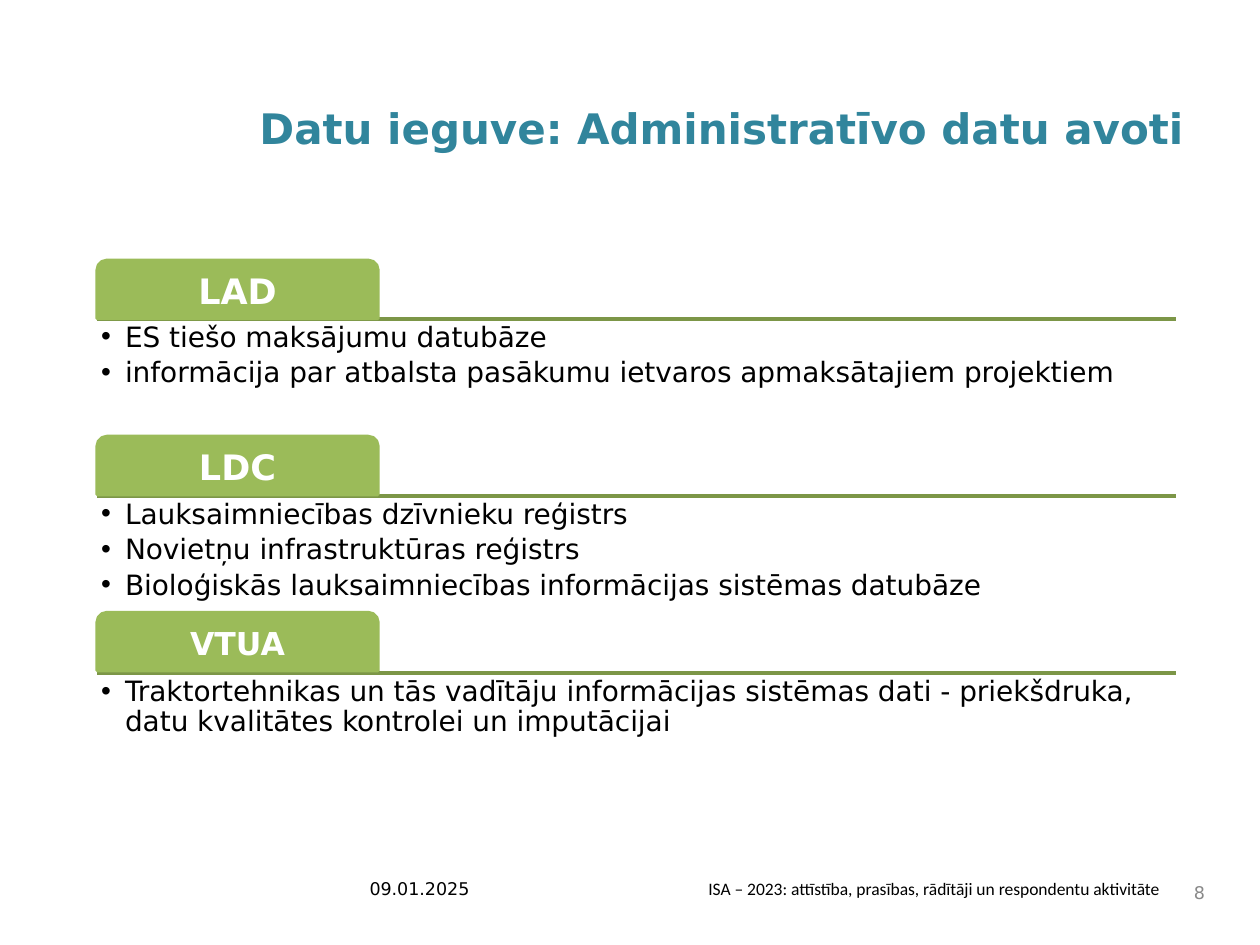
from lxml.etree import SubElement
from pptx import Presentation
from pptx.dml.color import RGBColor
from pptx.enum.shapes import MSO_CONNECTOR, MSO_SHAPE
from pptx.enum.text import MSO_ANCHOR, MSO_AUTO_SIZE, PP_ALIGN
from pptx.oxml.ns import qn
from pptx.util import Cm, Pt

# Content
TITLE = "Datu ieguve: Administratīvo datu avoti"
GROUPS = [
    ("LAD", 20, [
        "ES tiešo maksājumu datubāze",
        "informācija par atbalsta pasākumu ietvaros apmaksātajiem projektiem",
    ]),
    ("LDC", 20, [
        "Lauksaimniecības dzīvnieku reģistrs",
        "Novietņu infrastruktūras reģistrs",
        "Bioloģiskās lauksaimniecības informācijas sistēmas datubāze",
    ]),
    ("VTUA", 18, [
        "Traktortehnikas un tās vadītāju informācijas sistēmas dati - "
        "priekšdruka, datu kvalitātes kontrolei un imputācijai",
    ]),
]

# Colours and fonts
TEAL = RGBColor(0x31, 0x85, 0x9C)
GREEN = RGBColor(0x9B, 0xBB, 0x59)
OLIVE = RGBColor(0x7C, 0x96, 0x47)
WHITE = RGBColor(0xFF, 0xFF, 0xFF)
BLACK = RGBColor(0, 0, 0)
GREY = RGBColor(0x89, 0x89, 0x89)
SANS, SLIM = "DejaVu Sans", "Calibri"

# Footer: text, left, width, font, colour, alignment, anchor
FOOT = [
    ("09.01.2025", 7.2, 5.5, SANS, BLACK, PP_ALIGN.LEFT, MSO_ANCHOR.TOP),
    ("ISA – 2023: attīstība, prasības, rādītāji un respondentu aktivitāte ",
     13.54, 10.16, SLIM, BLACK, PP_ALIGN.RIGHT, MSO_ANCHOR.TOP),
    ("8", 23.7, 0.84, SANS, GREY, PP_ALIGN.RIGHT, MSO_ANCHOR.MIDDLE),
]

# Layout in cm
LEFT, WIDE = 1.96, 21.74
RULE_TOP, RULE_STEP = 6.43, 3.57
TAB_TOP, TAB_STEP = 5.25, 3.55
TAB_WIDE, TAB_HIGH = 5.66, 1.17
LIST_HIGH = 2.34
FOOT_TOP, FOOT_HIGH = 17.58, 0.84


def place(shape, left, top, width, height):
    shape.left, shape.top = Cm(left), Cm(top)
    shape.width, shape.height = Cm(width), Cm(height)


def frame(shape, anchor, side=0.25, edge=0.13):
    text = shape.text_frame
    text.word_wrap = True
    text.auto_size = MSO_AUTO_SIZE.NONE
    text.vertical_anchor = anchor
    text.margin_left = text.margin_right = Cm(side)
    text.margin_top = text.margin_bottom = Cm(edge)
    return text


def write(para, words, size, color, font=SANS, bold=False, align=PP_ALIGN.LEFT):
    para.alignment = align
    para.space_before = Pt(0)
    run = para.add_run()
    run.text = words
    run.font.name, run.font.size, run.font.bold = font, Pt(size), bold
    run.font.color.rgb = color


def bullet(para):
    props = para._p.get_or_add_pPr()
    props.set("marL", str(Cm(0.48)))
    props.set("indent", str(-Cm(0.48)))
    SubElement(props, qn("a:buFont")).set("typeface", "Arial")
    SubElement(props, qn("a:buChar")).set("char", "•")
    para.line_spacing = 0.9
    para.space_after = Pt(3)


def draw_rule(slide, y):
    rule = slide.shapes.add_connector(
        MSO_CONNECTOR.STRAIGHT, Cm(LEFT), Cm(y), Cm(LEFT + WIDE), Cm(y))
    rule.line.color.rgb, rule.line.width = OLIVE, Pt(2)
    SubElement(rule._element.spPr, qn("a:effectLst"))


def draw_tab(slide, y, name, size):
    tab = slide.shapes.add_shape(
        MSO_SHAPE.ROUND_2_SAME_RECTANGLE,
        Cm(LEFT), Cm(y), Cm(TAB_WIDE), Cm(TAB_HIGH))
    tab.shadow.inherit = False
    tab.fill.solid()
    tab.fill.fore_color.rgb = GREEN
    tab.line.color.rgb, tab.line.width = GREEN, Pt(2)
    text = frame(tab, MSO_ANCHOR.MIDDLE, 0.1, 0.1)
    write(text.paragraphs[0], name, size, WHITE, bold=True, align=PP_ALIGN.CENTER)


def fill_list(holder, y, items):
    place(holder, LEFT, y, WIDE, LIST_HIGH)
    text = frame(holder, MSO_ANCHOR.TOP, 0.08, 0.08)
    for i, item in enumerate(items):
        para = text.add_paragraph() if i else text.paragraphs[0]
        bullet(para)
        write(para, item, 16, BLACK)


def main():
    deck = Presentation()
    deck.slide_width, deck.slide_height = Cm(25.4), Cm(19.05)
    slide = deck.slides.add_slide(deck.slide_layouts[4])

    # Title
    title = slide.shapes.title
    place(title, 4.98, 1.83, 20.83, 1.47)
    write(frame(title, MSO_ANCHOR.MIDDLE).paragraphs[0], TITLE, 24, TEAL, bold=True)

    # Data sources: rule, tab and list for each
    *holders, spare = [p for p in slide.placeholders if p.placeholder_format.idx]
    spare._element.getparent().remove(spare._element)
    for i, ((name, size, items), holder) in enumerate(zip(GROUPS, holders)):
        y = RULE_TOP + i * RULE_STEP
        draw_rule(slide, y)
        draw_tab(slide, TAB_TOP + i * TAB_STEP, name, size)
        fill_list(holder, y, items)

    # Footer
    for words, left, width, font, color, align, anchor in FOOT:
        box = slide.shapes.add_textbox(
            Cm(left), Cm(FOOT_TOP), Cm(width), Cm(FOOT_HIGH))
        write(frame(box, anchor).paragraphs[0], words, 10, color, font, align=align)

    deck.save("out.pptx")


if __name__ == "__main__":
    main()
